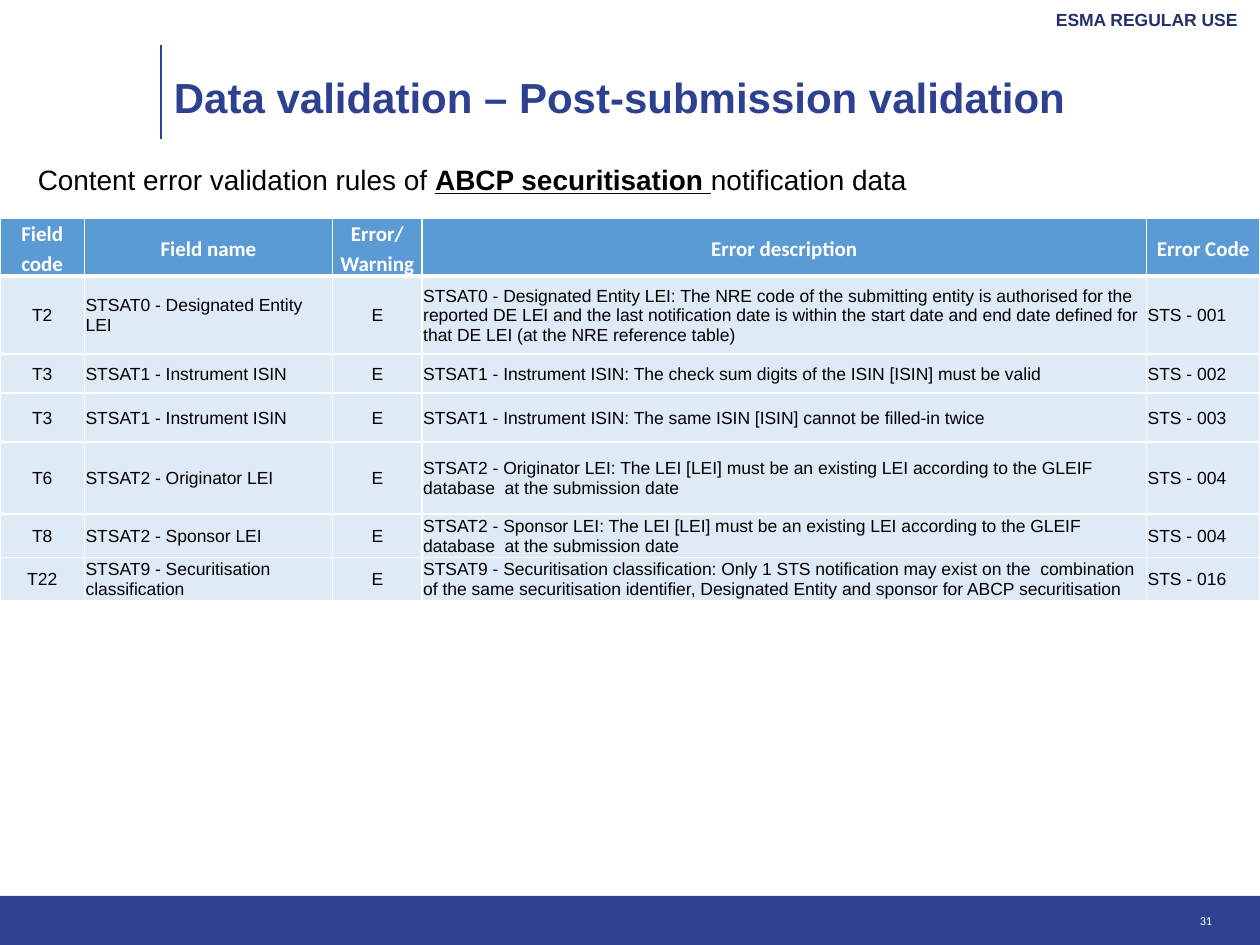
from pptx import Presentation
from pptx.dml.color import RGBColor
from pptx.enum.shapes import MSO_CONNECTOR as Line, MSO_SHAPE as Shape
from pptx.enum.text import MSO_ANCHOR as Anchor, PP_ALIGN as Align
from pptx.oxml.ns import qn
from pptx.util import Inches, Pt
from lxml.etree import SubElement as Sub

BLUE = RGBColor(0x2D, 0x41, 0x90)
NAVY = RGBColor(0x22, 0x31, 0x6C)
HEAD = RGBColor(0x5B, 0x9B, 0xD5)
PALE = RGBColor(0xDE, 0xEA, 0xF6)
BLACK = RGBColor(0, 0, 0)
WHITE = RGBColor(255, 255, 255)

COLS = [0.67, 1.97, 0.71, 5.75, 0.9]
HIGH = [0.45, 0.62, 0.31, 0.39, 0.57, 0.32, 0.32]
MID = (0, 2)
ROWS = [
    ("Field code", "Field name", "Error/ Warning", "Error description", "Error Code"),
    ("T2", "STSAT0 - Designated Entity LEI", "E",
     "STSAT0 - Designated Entity LEI: The NRE code of the submitting entity is authorised "
     "for the reported DE LEI and the last notification date is within the start date and "
     "end date defined for that DE LEI (at the NRE reference table)", "STS - 001"),
    ("T3", "STSAT1 - Instrument ISIN", "E",
     "STSAT1 - Instrument ISIN: The check sum digits of the ISIN [ISIN] must be valid",
     "STS - 002"),
    ("T3", "STSAT1 - Instrument ISIN", "E",
     "STSAT1 - Instrument ISIN: The same ISIN [ISIN] cannot be filled-in twice",
     "STS - 003"),
    ("T6", "STSAT2 - Originator LEI", "E",
     "STSAT2 - Originator LEI: The LEI [LEI] must be an existing LEI according to the "
     "GLEIF database  at the submission date", "STS - 004"),
    ("T8", "STSAT2 - Sponsor LEI", "E",
     "STSAT2 - Sponsor LEI: The LEI [LEI] must be an existing LEI according to the "
     "GLEIF database  at the submission date", "STS - 004"),
    ("T22", "STSAT9 - Securitisation classification", "E",
     "STSAT9 - Securitisation classification: Only 1 STS notification may exist on the  "
     "combination of the same securitisation identifier, Designated Entity and sponsor "
     "for ABCP securitisation", "STS - 016"),
]


def write(frame, *parts, size=10, color=BLACK, face="Arial", bold=False,
          align=Align.LEFT, space=None, after=None):
    para = frame.paragraphs[0]
    para.alignment = align
    if space:
        para.line_spacing = space
    if after:
        para.space_after = Pt(after)
    for part in parts:
        text, strong = part if isinstance(part, tuple) else (part, False)
        run = para.add_run()
        run.text = text
        font = run.font
        font.name, font.size, font.bold = face, Pt(size), bold or strong
        font.underline = strong
        font.color.rgb = color


def clear(frame, anchor):
    frame.margin_left = frame.margin_right = 0
    frame.margin_top = frame.margin_bottom = 0
    frame.word_wrap = True
    frame.vertical_anchor = anchor


def add_text(slide, box, *parts, anchor=Anchor.TOP, **style):
    frame = slide.shapes.add_textbox(*map(Inches, box)).text_frame
    clear(frame, anchor)
    write(frame, *parts, **style)


def add_title(slide, box, text, **style):
    title = slide.shapes.title
    title.left, title.top, title.width, title.height = map(Inches, box)
    clear(title.text_frame, Anchor.MIDDLE)
    write(title.text_frame, text, **style)


def add_bar(slide, box):
    bar = slide.shapes.add_shape(Shape.RECTANGLE, *map(Inches, box))
    bar.shadow.inherit = False
    bar.fill.solid()
    bar.fill.fore_color.rgb = BLUE
    bar.line.fill.background()


def add_rule(slide, *ends):
    rule = slide.shapes.add_connector(Line.STRAIGHT, *map(Inches, ends))
    rule.line.color.rgb = BLUE
    rule.line.width = Pt(1)
    Sub(rule.element.spPr, qn("a:effectLst"))


def edge(cell, low):
    props = cell._tc.get_or_add_tcPr()
    for spot, (tag, wide) in enumerate(zip(("lnL", "lnR", "lnT", "lnB"), (1, 1, 1, low))):
        line = Sub(props, qn(f"a:{tag}"), w=str(Pt(wide)))
        Sub(Sub(line, qn("a:solidFill")), qn("a:srgbClr"), val=str(WHITE))
        props.insert(spot, line)


def fill_cell(cell, text, head, mid):
    cell.vertical_anchor = Anchor.MIDDLE
    cell.margin_left = cell.margin_right = Inches(0.04 if head else 0.01)
    cell.margin_top = Inches(0 if head else 0.01)
    cell.margin_bottom = 0
    cell.fill.solid()
    cell.fill.fore_color.rgb = HEAD if head else PALE
    edge(cell, 3 if head else 1)
    if head:
        write(cell.text_frame, text, size=12, color=WHITE, face="Calibri",
              bold=True, align=Align.CENTER, space=1.15, after=12.5)
    else:
        write(cell.text_frame, text, align=Align.CENTER if mid else Align.LEFT)


def add_grid(slide, left, top):
    grid = slide.shapes.add_table(len(ROWS), len(COLS), Inches(left), Inches(top),
                                  Inches(sum(COLS)), Inches(sum(HIGH))).table
    for col, wide in zip(grid.columns, COLS):
        col.width = Inches(wide)
    for r, (row, high) in enumerate(zip(ROWS, HIGH)):
        grid.rows[r].height = Inches(high)
        for c, text in enumerate(row):
            fill_cell(grid.cell(r, c), text, r == 0, c in MID)


def main():
    deck = Presentation()
    deck.slide_width, deck.slide_height = Inches(10), Inches(7.5)
    slide = deck.slides.add_slide(deck.slide_layouts[5])
    add_bar(slide, (0, 7.11, 10, 0.39))
    add_rule(slide, 1.28, 1.1, 1.28, 0.36)
    add_text(slide, (6.65, 0.07, 3.17, 0.16), "ESMA REGULAR USE",
             color=NAVY, bold=True, align=Align.RIGHT)
    add_title(slide, (1.38, 0.53, 8.27, 0.48),
              "Data validation – Post-submission validation",
              size=24, color=BLUE, bold=True)
    add_text(slide, (0.3, 1.29, 9.7, 0.3), "Content error validation rules of ",
             ("ABCP securitisation ", True), "notification data", size=16)
    add_grid(slide, 0, 1.73)
    add_text(slide, (8.05, 7.25, 1.57, 0.11), "31", size=7, color=WHITE,
             face="Calibri", align=Align.RIGHT, anchor=Anchor.MIDDLE)
    deck.save("out.pptx")


if __name__ == "__main__":
    main()
